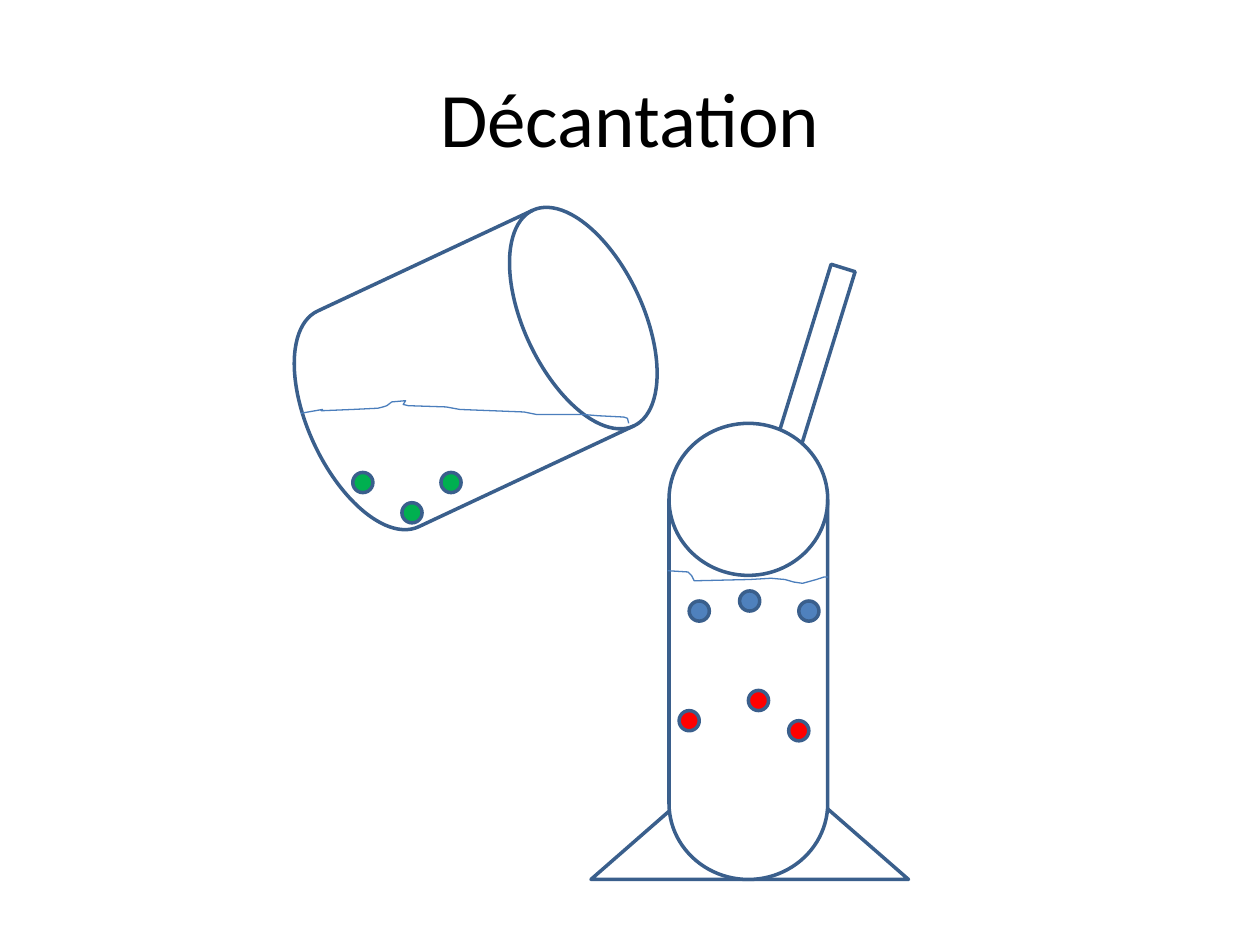
from pptx import Presentation
from pptx.dml.color import RGBColor
from pptx.enum.shapes import MSO_SHAPE
from pptx.enum.text import MSO_ANCHOR, PP_ALIGN
from pptx.util import Inches, Pt

WHITE = RGBColor(0xFF, 0xFF, 0xFF)
BLACK = RGBColor(0, 0, 0)
EDGE = RGBColor(0x3A, 0x5F, 0x8C)
WATER = RGBColor(0x4B, 0x7E, 0xBC)
GREEN = RGBColor(0x00, 0xB0, 0x50)
RED = RGBColor(0xFF, 0, 0)
BLUE = RGBColor(0x4F, 0x81, 0xBD)

deck = Presentation()
deck.slide_width, deck.slide_height = Inches(10), Inches(7.5)
slide = deck.slides.add_slide(deck.slide_layouts[5])


def write(shape, text, size=44, font="Calibri", color=BLACK, align=PP_ALIGN.CENTER):
    frame = shape.text_frame
    frame.vertical_anchor = MSO_ANCHOR.MIDDLE
    para = frame.paragraphs[0]
    para.alignment = align
    run = para.add_run()
    run.text = text
    run.font.size = Pt(size)
    run.font.name = font
    run.font.color.rgb = color


def draw(kind, left, top, width, height, fill=WHITE, turn=0):
    """Add an outlined preset shape, sized in inches and turned in degrees."""
    shape = slide.shapes.add_shape(
        kind, Inches(left), Inches(top), Inches(width), Inches(height))
    shape.shadow.inherit = False
    shape.rotation = turn
    shape.fill.solid()
    shape.fill.fore_color.rgb = fill
    shape.line.color.rgb = EDGE
    shape.line.width = Pt(2)


# Stirring rod, behind everything else
draw(MSO_SHAPE.RECTANGLE, 6.15, 2.06, 0.2, 2.99, turn=17.2)

title = slide.shapes.title
title.left, title.top = Inches(0.5), Inches(0.3)
title.width, title.height = Inches(9), Inches(1.25)
write(title, "Décantation")

# Tilted beaker, then the foot and body of the test tube
draw(MSO_SHAPE.FLOWCHART_MAGNETIC_DISK, 2.83, 1.51, 1.89, 2.83, turn=64.9)
draw(MSO_SHAPE.ISOSCELES_TRIANGLE, 4.69, 5.88, 2.52, 1.1)
draw(MSO_SHAPE.FLOWCHART_MAGNETIC_DISK, 5.31, 3.36, 1.26, 3.62)

# Water surfaces in the beaker and the tube
waves = [
    [(2.39, 3.28), (2.56, 3.25), (2.55, 3.26), (2.8, 3.25), (3, 3.24),
     (3.04, 3.23), (3.07, 3.22), (3.11, 3.19), (3.22, 3.18), (3.2, 3.21),
     (3.24, 3.22), (3.54, 3.23), (3.65, 3.25), (4.16, 3.27), (4.26, 3.29),
     (4.63, 3.29), (4.75, 3.3), (4.95, 3.31), (4.98, 3.32), (4.99, 3.36)],
    [(5.3, 4.53), (5.46, 4.54), (5.49, 4.57), (5.51, 4.61), (5.95, 4.6),
     (6.12, 4.59), (6.23, 4.6), (6.3, 4.62), (6.37, 4.63), (6.48, 4.6),
     (6.54, 4.58), (6.57, 4.58)],
]
for wave in waves:
    start, *rest = [(Inches(x), Inches(y)) for x, y in wave]
    pen = slide.shapes.build_freeform(*start)
    pen.add_line_segments(rest, close=False)
    line = pen.convert_to_shape()
    line.shadow.inherit = False
    line.fill.background()
    line.line.color.rgb = WATER
    line.line.width = Pt(0.75)

# Particles
grains = {
    GREEN: [(2.8, 3.75), (3.19, 3.99), (3.5, 3.75)],
    RED: [(6.26, 5.72), (5.94, 5.48), (5.39, 5.64)],
    BLUE: [(6.34, 4.77), (5.87, 4.69), (5.47, 4.77)],
}
for color, spots in grains.items():
    for left, top in spots:
        draw(MSO_SHAPE.OVAL, left, top, 0.16, 0.16, fill=color)

deck.save("out.pptx")
